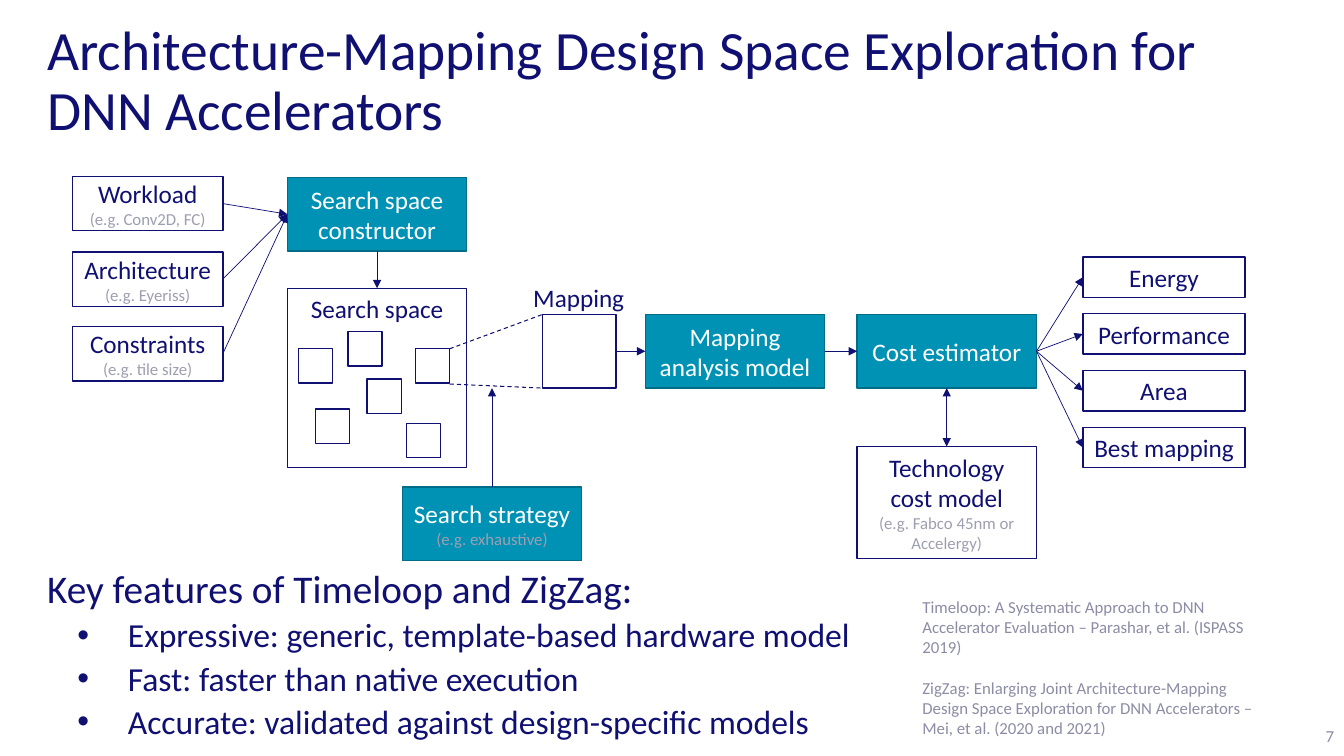
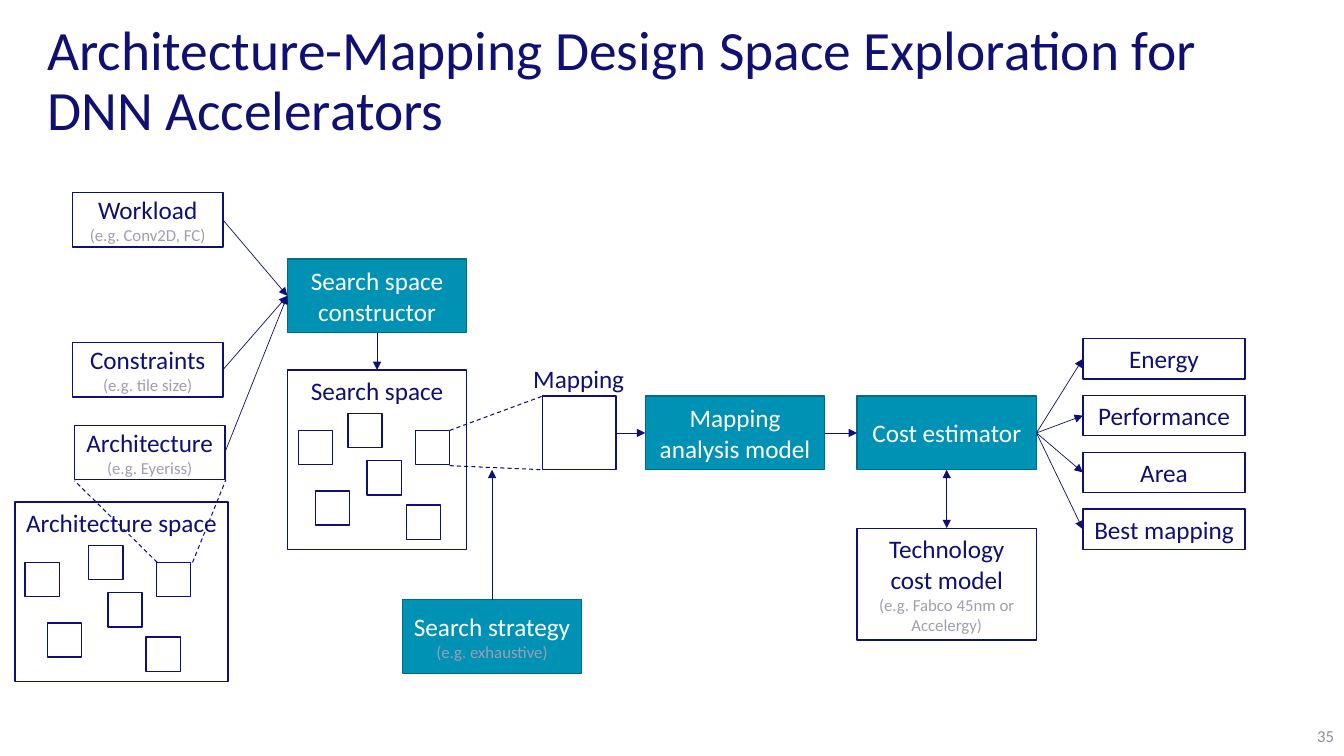
from lxml import etree
from pptx import Presentation
from pptx.dml.color import RGBColor
from pptx.enum import dml, shapes, text
from pptx.oxml import ns
from pptx.util import Inches, Pt

FONT = "Calibri"
COLORS = {"navy": "101073", "teal": "0092B5", "teal_edge": "006C86",
          "white": "FFFFFF", "hint": "9E9EB1", "muted": "8C8CA6"}
TITLE = "Architecture-Mapping Design Space Exploration for DNN Accelerators"
TOP, LEFT, BOTTOM, RIGHT = range(4)
CENTER = text.PP_ALIGN.CENTER
MIDDLE = text.MSO_ANCHOR.MIDDLE

# Shared grid of the diagram
BLOCK_W, BLOCK_H = 1.78, 0.73
INPUT_W, INPUT_H = 1.49, 0.54
OUTPUT_W, OUTPUT_H = 1.61, 0.4
SPACE_H, POINT = 1.78, 0.34
OUTPUTS = ["Energy", "Performance", "Area", "Best mapping"]
OUTPUT_PITCH = 1.69 / 3
INPUT_HINTS = {"Workload": "(e.g. Conv2D, FC)",
               "Architecture": "(e.g. Eyeriss)",
               "Constraints": "(e.g. tile size)"}
POINT_YS = [0.6, 0.43, 1.2, 0.9, 1.34, 0.6]
SEARCH_XS = [0.11, 0.6, 0.28, 0.79, 1.18, 1.27]
ARCH_XS = [0.1, 0.73, 0.32, 0.92, 1.3, 1.4]


def rgb(name):
    return RGBColor.from_string(COLORS[name])


def style(p, size, color, align=None):
    p.alignment = align
    for r in p.runs:
        r.font.name = FONT
        r.font.size = Pt(size)
        r.font.color.rgb = rgb(color)


# Text boxes
def add_text(slide, at, lines, size, color, anchor=text.MSO_ANCHOR.TOP,
             align=None, wrap=True):
    tf = slide.shapes.add_textbox(*map(Inches, at)).text_frame
    tf.word_wrap = wrap
    tf.vertical_anchor = anchor
    tf.text = "\n".join(lines)
    for p in tf.paragraphs:
        style(p, size, color, align)
    return tf


def add_bullet(p):
    pPr = p._p.get_or_add_pPr()
    pPr.set("marL", str(Inches(0.8)))
    pPr.set("indent", str(Inches(-0.5)))
    etree.SubElement(pPr, ns.qn("a:buFont")).set("typeface", "Arial")
    etree.SubElement(pPr, ns.qn("a:buChar")).set("char", "•")


# Boxes
def add_box(slide, at, label="", hint="", teal=False, anchor=MIDDLE):
    sp = slide.shapes.add_shape(shapes.MSO_SHAPE.RECTANGLE, *map(Inches, at))
    sp.shadow.inherit = False
    sp.fill.solid()
    sp.fill.fore_color.rgb = rgb("teal" if teal else "white")
    sp.line.color.rgb = rgb("teal_edge" if teal else "navy")
    sp.line.width = Pt(1)
    tf = sp.text_frame
    tf.vertical_anchor = anchor
    if label:
        tf.text = label
        style(tf.paragraphs[0], 18, "white" if teal else "navy", CENTER)
    if hint:
        p = tf.add_paragraph()
        p.text = hint
        style(p, 12, "hint", CENTER)
    return sp


def add_block(slide, x, y, label, hint=""):
    return add_box(slide, (x, y, BLOCK_W, BLOCK_H), label, hint, teal=True)


def add_space(slide, x, y, width, label, point_xs):
    """A design space: a labelled frame with scattered design points."""
    frame = add_box(slide, (x, y, width, SPACE_H), label,
                    anchor=text.MSO_ANCHOR.TOP)
    for dx, dy in zip(point_xs, POINT_YS):
        add_box(slide, (x + dx, y + dy, POINT, POINT))
    return frame


# Lines and arrows
def add_line(slide, start, end, width):
    c = slide.shapes.add_connector(shapes.MSO_CONNECTOR.STRAIGHT,
                                   *map(Inches, (*start, *end)))
    c.line.color.rgb = rgb("navy")
    c.line.width = Pt(width)
    etree.SubElement(c._element.spPr, ns.qn("a:effectLst"))
    return c


def add_dash(slide, start, end):
    add_line(slide, start, end, 0.75).line.dash_style = dml.MSO_LINE.DASH


def add_arrow(slide, source, side, target=None, target_side=LEFT,
              end=(0, 0), both=False):
    """Joins two boxes, or runs from a box to the free point `end`."""
    c = add_line(slide, end, end, 0.5)
    c.begin_connect(source, side)
    if target is not None:
        c.end_connect(target, target_side)
    ln = c.line._get_or_add_ln()
    for tag in ["a:headEnd", "a:tailEnd"] if both else ["a:tailEnd"]:
        etree.SubElement(ln, ns.qn(tag)).set("type", "triangle")


# Slide parts
def add_base(prs, number):
    slide = prs.slides.add_slide(prs.slide_layouts[6])
    tf = add_text(slide, (0.37, 0.4, 12.6, 0.83), [TITLE], 39.6, "navy", MIDDLE)
    tf.paragraphs[0].line_spacing = 0.9
    add_text(slide, (12.65, 7.1, 0.68, 0.4), [str(number)], 12, "muted",
             MIDDLE, text.PP_ALIGN.RIGHT)
    return slide


def add_flow(slide, dy, strategy_y, inputs):
    """The exploration flow, moved down by dy; inputs maps name to (x, y)."""
    row = 3.12 + dy
    # Search space and the mapping drawn from it
    search = add_space(slide, 2.85, 2.86 + dy, BLOCK_W, "Search space", SEARCH_XS)
    mapping = add_box(slide, (5.38, row, BLOCK_H, BLOCK_H))
    add_dash(slide, (4.46, 3.46 + dy), (5.38, row))
    add_dash(slide, (4.46, 3.81 + dy), (5.38, row + BLOCK_H))
    add_text(slide, (5.19, 2.75 + dy, 1.12, 0.4), ["Mapping"], 18, "navy",
             wrap=False)

    # Processing blocks
    analysis = add_block(slide, 6.4, row, "Mapping analysis model")
    cost = add_block(slide, 8.5, row, "Cost estimator")
    constructor = add_block(slide, 2.85, 1.76 + dy, "Search space constructor")
    strategy = add_block(slide, 3.99, strategy_y, "Search strategy",
                         "(e.g. exhaustive)")
    technology = add_box(slide, (8.5, 4.43 + dy, BLOCK_W, 1.11),
                         "Technology cost model",
                         "(e.g. Fabco 45nm or Accelergy)")
    add_arrow(slide, constructor, BOTTOM, search, TOP)
    add_arrow(slide, mapping, RIGHT, analysis)
    add_arrow(slide, analysis, RIGHT, cost)
    add_arrow(slide, strategy, TOP, end=(4.88, row + BLOCK_H))
    add_arrow(slide, cost, BOTTOM, technology, TOP, both=True)

    # Inputs and outputs
    for name, (x, y) in inputs.items():
        box = add_box(slide, (x, y, INPUT_W, INPUT_H), name, INPUT_HINTS[name])
        add_arrow(slide, box, RIGHT, constructor)
    for i, name in enumerate(OUTPUTS):
        y = 2.55 + dy + i * OUTPUT_PITCH
        box = add_box(slide, (10.74, y, OUTPUT_W, OUTPUT_H), name)
        add_arrow(slide, cost, RIGHT, box)


def add_features(slide):
    tf = add_text(slide, (0.37, 5.6, 12.6, 1.9), [
        "Key features of Timeloop and ZigZag:",
        "Expressive: generic, template-based hardware model",
        "Fast: faster than native execution",
        "Accurate: validated against design-specific models"], 24, "navy")
    heading, *points = tf.paragraphs
    style(heading, 28, "navy")
    heading.line_spacing = 0.9
    heading.space_before = Pt(10)
    for p in points:
        p.line_spacing = 0.9
        p.space_before = Pt(5)
        add_bullet(p)


def add_references(slide):
    tf = add_text(slide, (9.05, 5.87, 3.6, 1.6), [
        "Timeloop: A Systematic Approach to DNN Accelerator Evaluation – "
        "Parashar, et al. (ISPASS 2019)",
        "ZigZag: Enlarging Joint Architecture-Mapping Design Space Exploration "
        "for DNN Accelerators – Mei, et al. (2020 and 2021)"], 12, "muted")
    tf.paragraphs[1].space_before = Pt(14.6)


def main():
    prs = Presentation()
    prs.slide_width, prs.slide_height = Inches(13.33), Inches(7.5)

    # Flow with key features
    slide = add_base(prs, 7)
    add_features(slide)
    add_flow(slide, 0, 4.83, {"Workload": (0.72, 1.75),
                              "Architecture": (0.72, 2.5),
                              "Constraints": (0.72, 3.24)})
    add_references(slide)

    # Flow with an architecture space
    slide = add_base(prs, 35)
    add_flow(slide, 0.81, 5.95, {"Workload": (0.72, 1.91),
                                 "Constraints": (0.72, 3.4),
                                 "Architecture": (0.74, 4.22)})
    add_space(slide, 0.15, 4.98, 2.11, "Architecture space", ARCH_XS)
    add_dash(slide, (1.56, 5.58), (0.74, 4.77))
    add_dash(slide, (1.91, 5.58), (2.24, 4.76))

    prs.save("out.pptx")


if __name__ == "__main__":
    main()
